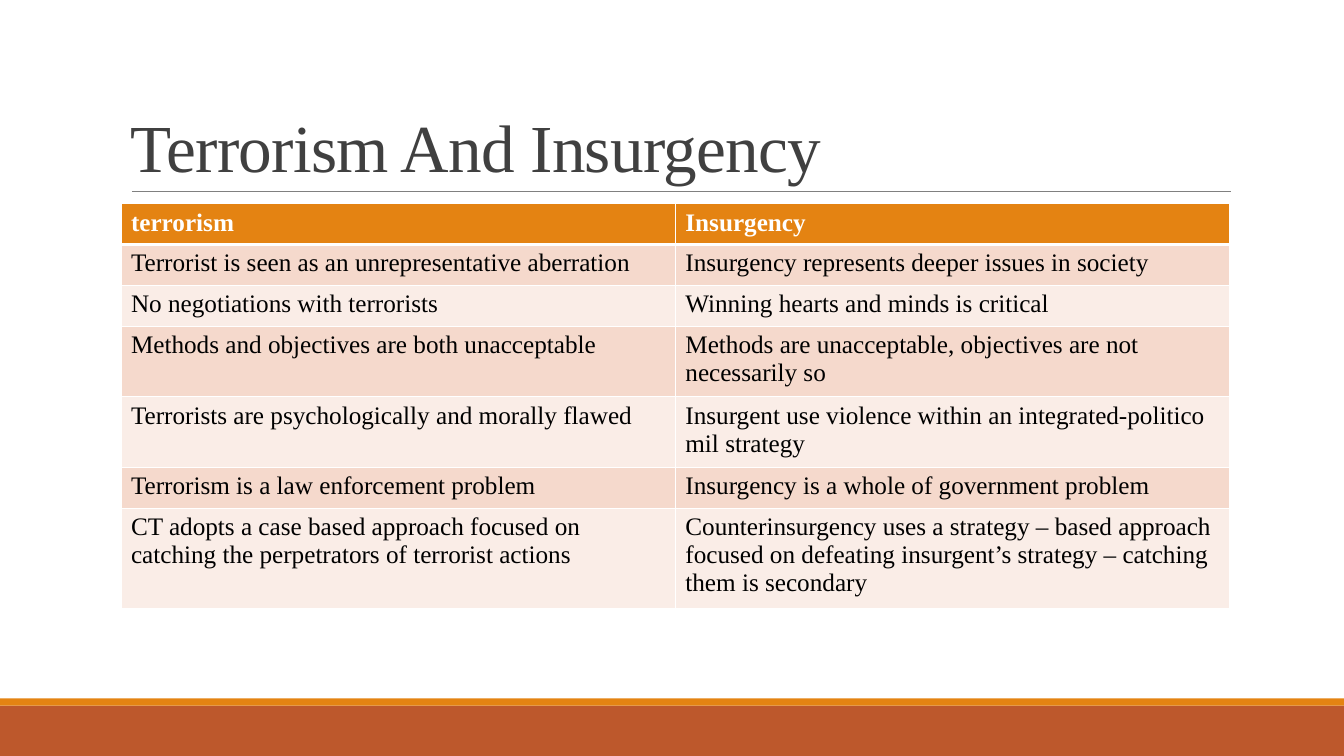
"""Build the slide comparing terrorism and insurgency in a two-column table."""
from typing import NamedTuple

from lxml import etree
from pptx import Presentation
from pptx.dml.color import RGBColor
from pptx.enum.shapes import MSO_CONNECTOR, MSO_SHAPE
from pptx.enum.text import MSO_ANCHOR
from pptx.oxml.ns import qn
from pptx.slide import Slide
from pptx.table import _Cell
from pptx.text.text import Font
from pptx.util import Pt

RECTANGLE = MSO_SHAPE.RECTANGLE
STRAIGHT = MSO_CONNECTOR.STRAIGHT
BOTTOM = MSO_ANCHOR.BOTTOM

RUST = RGBColor(0xBD, 0x58, 0x2C)
ORANGE = RGBColor(0xE4, 0x83, 0x12)
GREY = RGBColor(0x80, 0x80, 0x80)
CHARCOAL = RGBColor(0x40, 0x40, 0x40)
WHITE = RGBColor(0xFF, 0xFF, 0xFF)
BLACK = RGBColor(0x00, 0x00, 0x00)
PEACH = RGBColor(0xF5, 0xD9, 0xCC)
PALE_PEACH = RGBColor(0xFA, 0xED, 0xE7)

TYPEFACE = "Times New Roman"
SLIDE_WIDTH = 960
SLIDE_HEIGHT = 540
MARGIN = 86.4
CONTENT_WIDTH = 792
TABLE_TOP = 145.4
ROW_HEIGHT = 29.2


class Band(NamedTuple):
    top: float
    height: float
    color: RGBColor


class Contrast(NamedTuple):
    terrorism: str
    insurgency: str


FOOTER_BANDS = [Band(504, 36, RUST), Band(498.9, 5.1, ORANGE)]

CONTRASTS = [
    Contrast("terrorism", "Insurgency"),
    Contrast("Terrorist is seen as an unrepresentative aberration",
             "Insurgency represents deeper issues in society"),
    Contrast("No negotiations with terrorists",
             "Winning hearts and minds is critical"),
    Contrast("Methods and objectives are both unacceptable",
             "Methods are unacceptable, objectives are not necessarily so"),
    Contrast("Terrorists are psychologically and morally flawed",
             "Insurgent use violence within an integrated-politico mil strategy"),
    Contrast("Terrorism is a law enforcement problem",
             "Insurgency is a whole of government problem"),
    Contrast("CT adopts a case based approach focused on catching the "
             "perpetrators of terrorist actions",
             "Counterinsurgency uses a strategy – based approach focused on "
             "defeating insurgent’s strategy – catching them is secondary"),
]


def style_font(font: Font, size: float, color: RGBColor, bold: bool = False) -> None:
    font.name = TYPEFACE
    font.size = Pt(size)
    font.bold = bold
    font.color.rgb = color


def draw_band(slide: Slide, band: Band) -> None:
    stripe = slide.shapes.add_shape(
        RECTANGLE, 0, Pt(band.top), Pt(SLIDE_WIDTH), Pt(band.height))
    stripe.shadow.inherit = False
    stripe.fill.solid()
    stripe.fill.fore_color.rgb = band.color
    stripe.line.fill.background()


def draw_title_rule(slide: Slide) -> None:
    rule = slide.shapes.add_connector(
        STRAIGHT, Pt(94.3), Pt(136.8), Pt(879.1), Pt(136.8))
    rule.line.color.rgb = GREY
    rule.line.width = Pt(0.5)
    etree.SubElement(rule._element.spPr, qn("a:effectLst"))


def draw_title(slide: Slide, title: str) -> None:
    heading = slide.shapes.add_textbox(
        Pt(MARGIN), Pt(22.3), Pt(CONTENT_WIDTH), Pt(114.5)).text_frame
    heading.word_wrap = True
    heading.vertical_anchor = BOTTOM
    heading.text = title
    line = heading.paragraphs[0]
    line.line_spacing = 0.85
    run = line.runs[0]
    style_font(run.font, 48, CHARCOAL)
    run._r.get_or_add_rPr().set("spc", "-50")


def draw_borders(cell: _Cell, widths: dict[str, float]) -> None:
    properties = cell._tc.get_or_add_tcPr()
    for position, (side, width) in enumerate(widths.items()):
        border = etree.Element(qn(f"a:ln{side}"), w=str(Pt(width)))
        fill = etree.SubElement(border, qn("a:solidFill"))
        etree.SubElement(fill, qn("a:srgbClr"), val=str(WHITE))
        properties.insert(position, border)


def fill_cell(cell: _Cell, text: str, row: int) -> None:
    is_header = row == 0
    cell.text = text
    style_font(cell.text_frame.paragraphs[0].runs[0].font, 18,
               WHITE if is_header else BLACK, is_header)
    cell.fill.solid()
    cell.fill.fore_color.rgb = (
        ORANGE if is_header else PEACH if row % 2 else PALE_PEACH)
    draw_borders(cell, {"L": 1, "R": 1, "T": 3 if row == 1 else 1,
                        "B": 3 if is_header else 1})


def draw_contrasts(slide: Slide, contrasts: list[Contrast]) -> None:
    comparison = slide.shapes.add_table(
        len(contrasts), 2, Pt(MARGIN), Pt(TABLE_TOP), Pt(CONTENT_WIDTH),
        Pt(ROW_HEIGHT * len(contrasts))).table
    for row, contrast in enumerate(contrasts):
        comparison.rows[row].height = Pt(ROW_HEIGHT)
        for column, text in enumerate(contrast):
            fill_cell(comparison.cell(row, column), text, row)


def main() -> None:
    deck = Presentation()
    deck.slide_width = Pt(SLIDE_WIDTH)
    deck.slide_height = Pt(SLIDE_HEIGHT)
    slide = deck.slides.add_slide(deck.slide_layouts[6])
    for band in FOOTER_BANDS:
        draw_band(slide, band)
    draw_title_rule(slide)
    draw_title(slide, "Terrorism And Insurgency")
    draw_contrasts(slide, CONTRASTS)
    deck.save("out.pptx")


if __name__ == "__main__":
    main()
